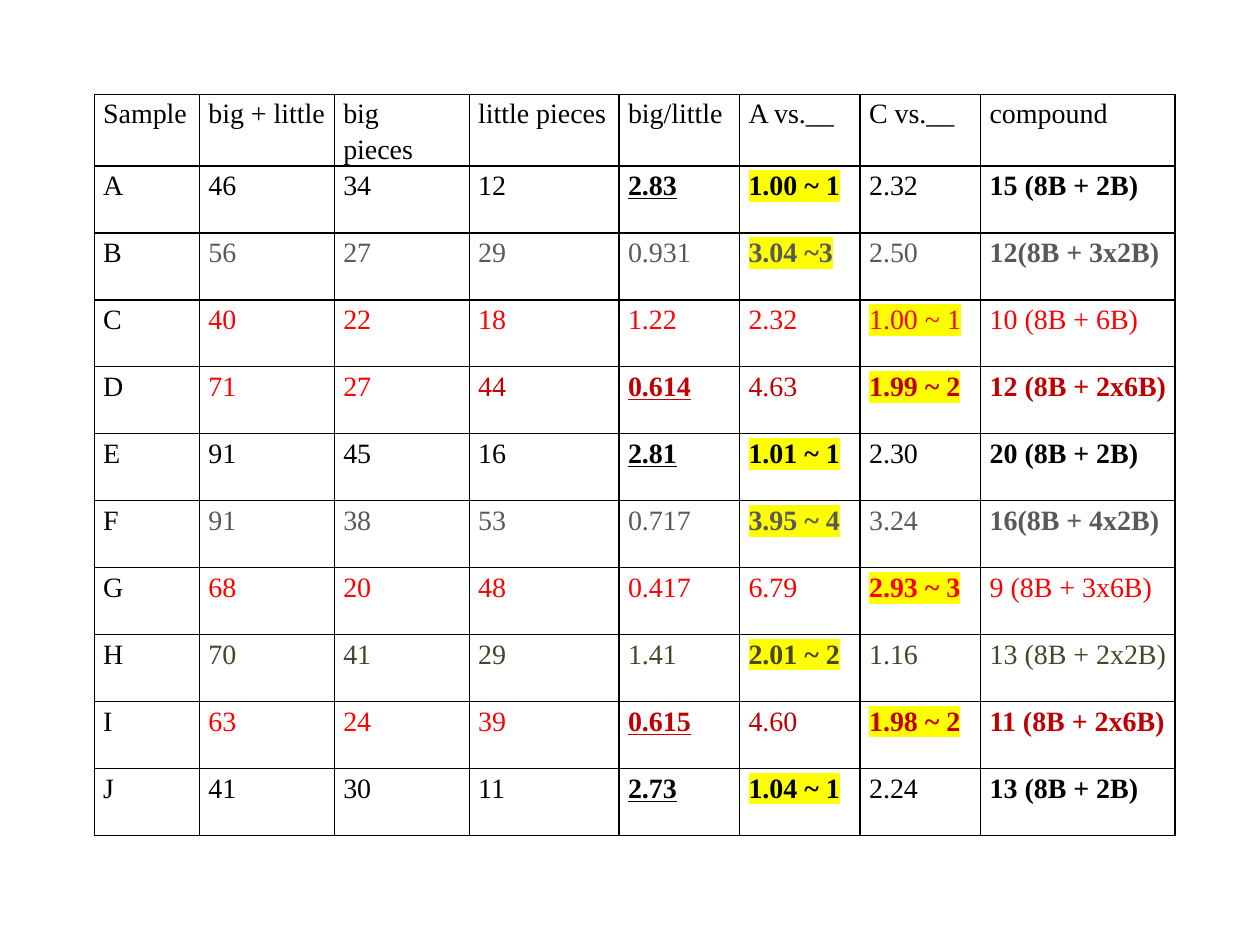
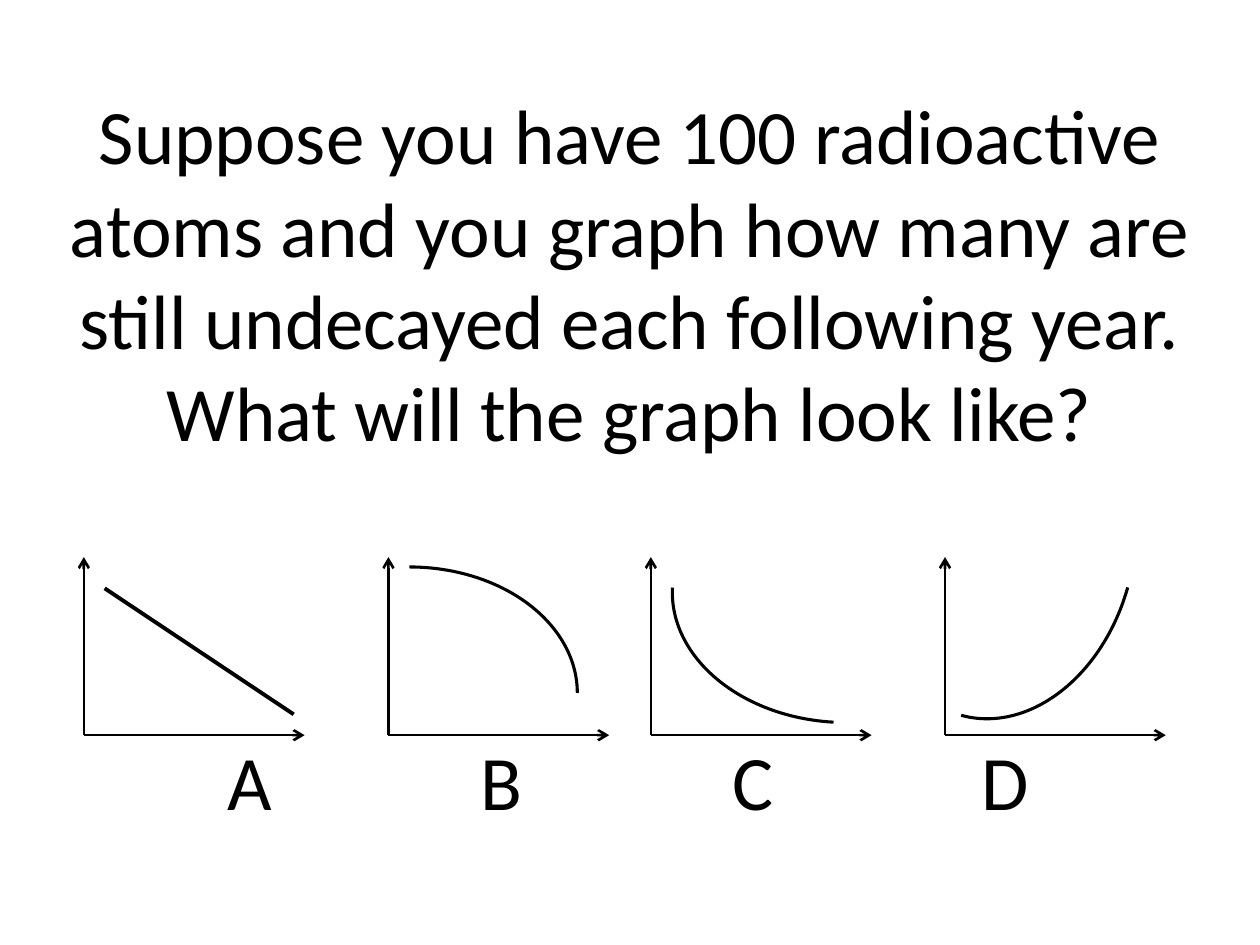
import pptx
import pptx.util
import pptx.dml.color
import pptx.enum.shapes
import pptx.enum.text
import pptx.oxml
import pptx.oxml.ns

Cm, Pt = pptx.util.Cm, pptx.util.Pt
qn = pptx.oxml.ns.qn

HUES = {"k": "000000", "g": "595959", "r": "FF0000", "d": "C00000",
        "o": "4A442A", "mark": "FFFF00"}

HEAD = ["Sample", "big + little", "big\vpieces", "little pieces",
        "big/little", "A vs.__", "C vs.__", "compound"]
# A leading * means bold, a leading _ means bold and underlined.
ROWS = [
    ("kkkkkkkk", HEAD),
    ("kkkkkkkk", ["A", "46", "34", "12", "_2.83", "*1.00 ~ 1", "2.32", "*15 (8B + 2B)"]),
    ("kggggggg", ["B", "56", "27", "29", "0.931", "*3.04 ~3", "2.50", "*12(8B + 3x2B)"]),
    ("krrrrrrr", ["C", "40", "22", "18", "1.22", "2.32", "1.00 ~ 1", "10 (8B + 6B)"]),
    ("krrddddd", ["D", "71", "27", "44", "_0.614", "4.63", "*1.99 ~ 2", "*12 (8B + 2x6B)"]),
    ("kkkkkkkk", ["E", "91", "45", "16", "_2.81", "*1.01 ~ 1", "2.30", "*20 (8B + 2B)"]),
    ("kggggggg", ["F", "91", "38", "53", "0.717", "*3.95 ~ 4", "3.24", "*16(8B + 4x2B)"]),
    ("krrrrrrr", ["G", "68", "20", "48", "0.417", "6.79", "*2.93 ~ 3", "9 (8B + 3x6B)"]),
    ("kooooooo", ["H", "70", "41", "29", "1.41", "*2.01 ~ 2", "1.16", "13 (8B + 2x2B)"]),
    ("krrrdddd", ["I", "63", "24", "39", "_0.615", "4.60", "*1.98 ~ 2", "*11 (8B + 2x6B)"]),
    ("kkkkkkkk", ["J", "41", "30", "11", "_2.73", "*1.04 ~ 1", "2.24", "*13 (8B + 2B)"]),
]
WIDTHS = [2.12, 2.72, 2.72, 3.02, 2.43, 2.43, 2.43, 3.92]
TALL = 1.35
EDGE = 1.9

QUERY = ("Suppose you have 100 radioactive atoms and you graph how many are "
         "still undecayed each following year. What will the graph look like?")
NAMES = ["A", "B", "C", "D"]
STOP, STEP = 3.72, 5.08
ROOTS = [1.69, 7.83, 13.12, 19.05]
BASE, RISE, RUN = 14.82, 3.59, 4.45
SLOPE = (2.11, 11.86, 5.92, 14.4)
ARCS = [(4.87, 11.43, 0), (13.55, 9.48, 183), (16.9, 8.62, 105.6)]


def tint(name):
    return pptx.dml.color.RGBColor.from_string(HUES[name])


def put(item, looks):
    for key, value in looks.items():
        setattr(item, key, value)


def style(run, hue, looks):
    put(run.font, looks)
    run.font.color.rgb = tint(hue)


def mark(run):
    fill = run.font._element.find(qn("a:solidFill"))
    fill.addnext(pptx.oxml.parse_xml(
        f'<a:highlight {pptx.oxml.ns.nsdecls("a")}>'
        f'<a:srgbClr val="{HUES["mark"]}"/></a:highlight>'))


def frame(cell):
    props = cell._tc.get_or_add_tcPr()
    for side in "LRTB":
        props.append(pptx.oxml.parse_xml(
            f'<a:ln{side} {pptx.oxml.ns.nsdecls("a")} w="{Pt(1)}">'
            f'<a:solidFill><a:srgbClr val="{HUES["k"]}"/></a:solidFill></a:ln{side}>'))
    cell.fill.background()


def write(cell, text, hue):
    frame(cell)
    put(cell, {"margin_left": Cm(0.18), "margin_right": Cm(0.18),
               "margin_top": 0, "margin_bottom": 0})
    para = cell.text_frame.paragraphs[0]
    para.text = text.lstrip("*_")
    para.line_spacing = 1.15
    for run in para.runs:
        style(run, hue, {"name": "Times New Roman", "size": Pt(16),
                         "bold": text[0] in "*_", "underline": text[0] == "_"})
        if "~" in text:
            mark(run)


def samples(slide):
    grid = slide.shapes.add_table(
        len(ROWS), len(WIDTHS), Cm(EDGE), Cm(EDGE),
        Cm(sum(WIDTHS)), Cm(TALL * len(ROWS))).table
    put(grid, {"first_row": False, "horz_banding": False})
    for col, wide in zip(grid.columns, WIDTHS):
        col.width = Cm(wide)
    for row, (hues, texts) in zip(grid.rows, ROWS):
        row.height = Cm(TALL)
        for cell, text, hue in zip(row.cells, texts, hues):
            write(cell, text, hue)


def ask(slide):
    body = slide.shapes.add_textbox(Cm(1.06), Cm(0.85), Cm(23.28), Cm(16.72)).text_frame
    put(body, {"word_wrap": True,
               "vertical_anchor": pptx.enum.text.MSO_ANCHOR.MIDDLE})
    align = pptx.enum.text.PP_ALIGN
    top, keys = body.paragraphs[0], body.add_paragraph()
    put(top, {"text": QUERY, "alignment": align.CENTER})
    put(keys, {"text": "".join("\t" + name for name in NAMES),
               "alignment": align.LEFT, "space_before": Pt(158)})
    stops = "".join(f'<a:tab pos="{Cm(STOP + STEP * i)}" algn="ctr"/>'
                    for i in range(len(NAMES)))
    keys._p.get_or_add_pPr().append(pptx.oxml.parse_xml(
        f'<a:tabLst {pptx.oxml.ns.nsdecls("a")}>{stops}</a:tabLst>'))
    for para in (top, keys):
        for run in para.runs:
            style(run, "k", {"name": "Calibri", "size": Pt(44)})


def line(slide, ends, wide, arrow=False):
    rule = slide.shapes.add_connector(
        pptx.enum.shapes.MSO_CONNECTOR.STRAIGHT, *map(Cm, ends))
    rule.line.color.rgb = tint("k")
    rule.line.width = Pt(wide)
    if arrow:
        rule.line._get_or_add_ln().append(pptx.oxml.parse_xml(
            f'<a:tailEnd {pptx.oxml.ns.nsdecls("a")} type="arrow"/>'))
    rule._element.spPr.append(pptx.oxml.parse_xml(
        f'<a:effectLst {pptx.oxml.ns.nsdecls("a")}/>'))


def graphs(slide):
    for root in ROOTS:
        line(slide, (root, BASE, root, BASE - RISE), 1.5, True)
        line(slide, (root, BASE, root + RUN, BASE), 1.5, True)
    line(slide, SLOPE, 2.25)
    for left, top, turn in ARCS:
        arc = slide.shapes.add_shape(pptx.enum.shapes.MSO_SHAPE.ARC,
                                     Cm(left), Cm(top), Cm(6.77), Cm(5.08))
        arc.rotation = turn
        arc.shadow.inherit = False
        arc.fill.background()
        arc.line.color.rgb = tint("k")
        arc.line.width = Pt(1.75)


def main():
    deck = pptx.Presentation()
    put(deck, {"slide_width": Cm(25.4), "slide_height": Cm(19.05)})
    for parts in ((samples,), (ask, graphs)):
        slide = deck.slides.add_slide(deck.slide_layouts[6])
        for part in parts:
            part(slide)
    deck.save("out.pptx")


if __name__ == "__main__":
    main()
